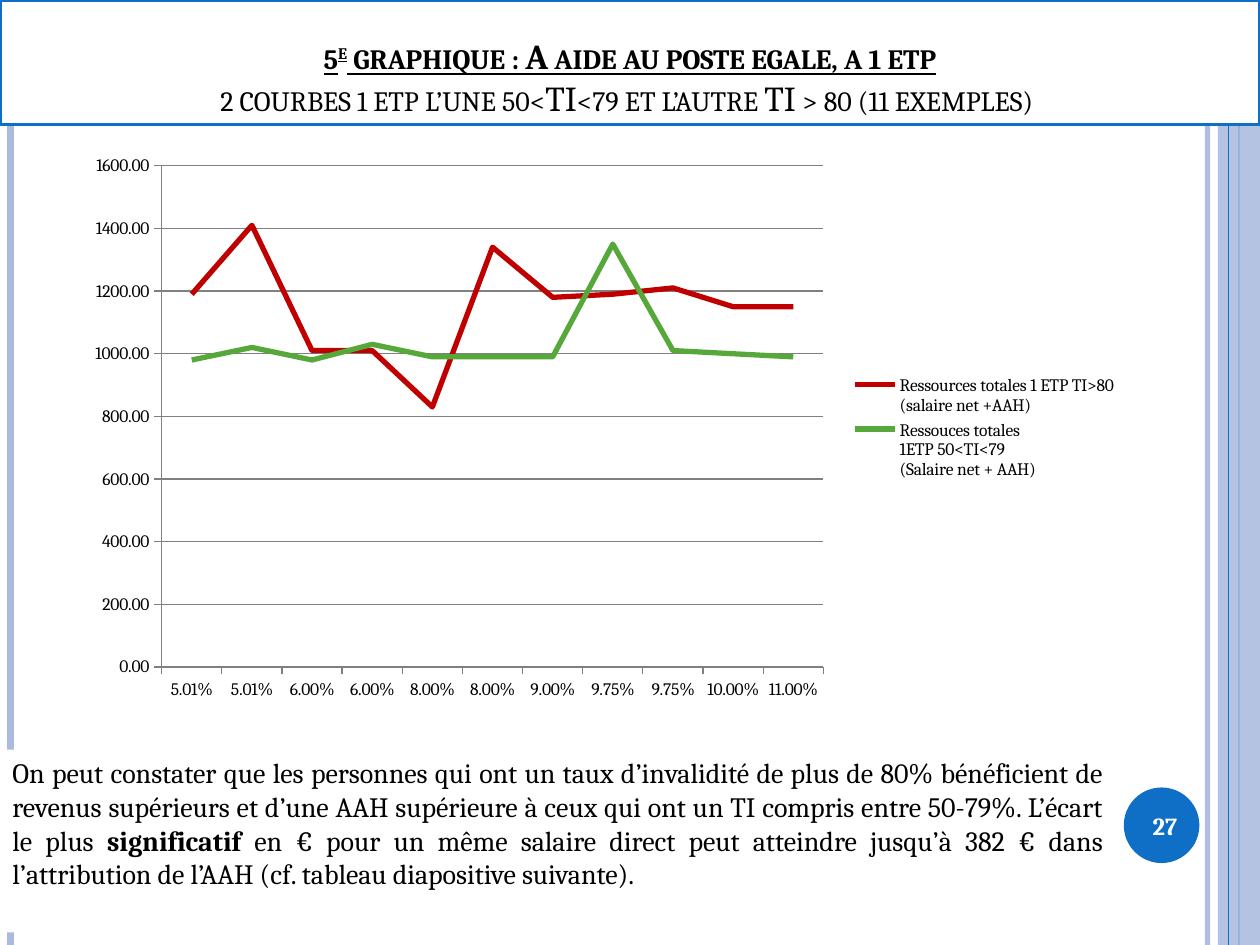
import pptx
import pptx.chart.data
import pptx.dml.color
import pptx.enum.chart
import pptx.enum.shapes
import pptx.enum.text
import pptx.oxml
import pptx.oxml.ns
import pptx.util
from dataclasses import dataclass

Pt = pptx.util.Pt
ALIGN = pptx.enum.text.PP_ALIGN
ANCHOR = pptx.enum.text.MSO_ANCHOR
SHAPE = pptx.enum.shapes.MSO_SHAPE


@dataclass(frozen=True)
class Theme:
    font: str = "Cambria"
    black: str = "000000"
    white: str = "FFFFFF"
    blue: str = "0F6FC6"
    pale: str = "ABBBDF"
    red: str = "C00000"
    green: str = "55A839"
    grid: str = "808080"
    title_size: int = 20
    body_size: int = 16
    badge_size: int = 14
    chart_size: int = 10


THEME = Theme()
WIDTH, HEIGHT = 720, 540

# Content: each paragraph is a list of (text, styles)
TITLE = [
    ("5", "bold underline small"),
    ("e", "bold underline small super"),
    (" graphique : A aide au poste egale, a 1 etp", "bold underline small"),
    ("\n", ""),
    ("2 courbes 1 etp l’une 50<TI<79 et l’autre TI > 80 (11 exemples) ", "small"),
]
BODY = [
    ("On peut constater que les personnes qui ont un taux d’invalidité de plus de 80% "
     "bénéficient de revenus supérieurs et d’une AAH supérieure à ceux qui ont un TI "
     "compris entre 50-79%. L’écart le plus ", ""),
    ("significatif", "bold"),
    (" en € pour un même salaire direct peut atteindre jusqu’à 382 € dans "
     "l’attribution de l’AAH (cf. tableau diapositive suivante).", ""),
]
PAGE_NUMBER = [(" 27", "bold")]
RATES = [0.0501, 0.0501, 0.06, 0.06, 0.08, 0.08, 0.09, 0.0975, 0.0975, 0.1, 0.11]
SERIES = [
    ("Ressources totales 1 ETP TI>80\n(salaire net +AAH)", THEME.red,
     [1190, 1410, 1010, 1010, 830, 1340, 1180, 1190, 1210, 1150, 1150]),
    ("Ressouces totales \n1ETP 50<TI<79\n(Salaire net + AAH)", THEME.green,
     [980, 1020, 980, 1030, 990, 990, 990, 1350, 1010, 1000, 990]),
]
# Vertical rules: x, colour, width, opacity in percent
RULES_BEHIND = [(690, THEME.pale, 3, 93), (6, THEME.pale, 4.5, 100),
                (708, THEME.blue, 1.5, 100)]
RULES_FRONT = [(702, THEME.blue, 0.75, 100)]


def rgb(color):
    return pptx.dml.color.RGBColor.from_string(color)


def set_opacity(element, percent):
    if percent < 100:
        color = element.find(".//" + pptx.oxml.ns.qn("a:srgbClr"))
        alpha = pptx.oxml.parse_xml(
            f'<a:alpha {pptx.oxml.ns.nsdecls("a")} val="{percent * 1000}"/>')
        color.append(alpha)


def add_rules(page, rules):
    for x, color, width, opacity in rules:
        rule = page.shapes.add_connector(
            pptx.enum.shapes.MSO_CONNECTOR.STRAIGHT, Pt(x), Pt(0), Pt(x), Pt(HEIGHT))
        rule.line.color.rgb = rgb(color)
        rule.line.width = Pt(width)
        properties = rule._element.spPr
        set_opacity(properties, opacity)
        properties.append(pptx.oxml.parse_xml(
            f'<a:effectLst {pptx.oxml.ns.nsdecls("a")}/>'))


def add_panel(page, kind, area, fill, line=None, opacity=100):
    panel = page.shapes.add_shape(kind, *map(Pt, area))
    panel.shadow.inherit = False
    panel.fill.solid()
    panel.fill.fore_color.rgb = rgb(fill)
    set_opacity(panel._element.spPr, opacity)
    if line:
        panel.line.color.rgb = rgb(line)
        panel.line.width = Pt(2)
    else:
        panel.line.fill.background()
    return panel


def write(box, spans, size, color, align, anchor):
    frame = box.text_frame
    frame.word_wrap = True
    frame.vertical_anchor = anchor
    para = frame.paragraphs[0]
    para.alignment = align
    for text, styles in spans:
        if text == "\n":
            para.add_line_break()
            continue
        span = para.add_run()
        span.text = text
        font = span.font
        font.name, font.size = THEME.font, Pt(size)
        font.color.rgb = rgb(color)
        font.bold = "bold" in styles
        font.underline = "underline" in styles
        properties = span._r.get_or_add_rPr()
        if "small" in styles:
            properties.set("cap", "small")
        if "super" in styles:
            properties.set("baseline", "30000")


def place(part, x, y, width, height, inner=False):
    """Give a chart part a fixed place, in fractions of the chart."""
    target = '<c:layoutTarget val="inner"/>' if inner else ""
    sizes = "".join(f'<c:{name} val="{value}"/>' for name, value in
                    zip("xywh", (x, y, width, height)))
    layout = pptx.oxml.parse_xml(
        f'<c:layout {pptx.oxml.ns.nsdecls("c")}><c:manualLayout>{target}'
        f'<c:xMode val="edge"/><c:yMode val="edge"/>{sizes}</c:manualLayout></c:layout>')
    for old in part.findall(pptx.oxml.ns.qn("c:layout")):
        part.remove(old)
    position = part.find(pptx.oxml.ns.qn("c:legendPos"))
    part.insert(0 if position is None else 1, layout)


def add_income_chart(page):
    data = pptx.chart.data.CategoryChartData(number_format="0.00")
    data.categories = RATES
    data.categories.number_format = "0.00%"
    for name, _, values in SERIES:
        data.add_series(name, values)
    chart = page.shapes.add_chart(
        pptx.enum.chart.XL_CHART_TYPE.LINE, Pt(42.5), Pt(82.8), Pt(601.2), Pt(323.3),
        data).chart
    chart.has_title = False
    chart.font.name, chart.font.size = THEME.font, Pt(THEME.chart_size)
    chart.font.color.rgb = rgb(THEME.black)

    for series, (_, color, _) in zip(chart.plots[0].series, SERIES):
        series.smooth = False
        series.format.line.color.rgb = rgb(color)
        series.format.line.width = Pt(3)
        series.marker.style = pptx.enum.chart.XL_MARKER_STYLE.NONE
    chart.plots[0].vary_by_categories = False

    rates, amounts = chart.category_axis, chart.value_axis
    amounts.minimum_scale, amounts.maximum_scale, amounts.major_unit = 0, 1600, 200
    amounts.has_major_gridlines = True
    for axis, number_format in ((rates, "0.00%"), (amounts, "0.00")):
        axis.major_tick_mark = pptx.enum.chart.XL_TICK_MARK.OUTSIDE
        axis.tick_labels.number_format = number_format
        axis.tick_labels.number_format_is_linked = False
    for item in (rates, amounts, amounts.major_gridlines):
        item.format.line.color.rgb = rgb(THEME.grid)
        item.format.line.width = Pt(0.75)

    chart.has_legend = True
    chart.legend.position = pptx.enum.chart.XL_LEGEND_POSITION.RIGHT
    chart.legend.include_in_layout = False
    place(chart._chartSpace.chart.plotArea, 0.083, 0.037, 0.629, 0.886, inner=True)
    place(chart.legend._element, 0.735, 0.4, 0.26, 0.2)


def main():
    deck = pptx.Presentation()
    deck.slide_width, deck.slide_height = Pt(WIDTH), Pt(HEIGHT)
    page = deck.slides.add_slide(deck.slide_layouts[6])

    # Side decoration
    add_rules(page, RULES_BEHIND)
    add_panel(page, SHAPE.RECTANGLE, (696, 0, 24, HEIGHT), THEME.pale, opacity=87)
    add_rules(page, RULES_FRONT)
    add_panel(page, SHAPE.OVAL, (642.2, 450, 43.2, 43.2), THEME.blue)

    # Title band
    title = add_panel(page, SHAPE.RECTANGLE, (0, 0, WIDTH, 71.3), THEME.white, THEME.blue)
    write(title, TITLE, THEME.title_size, THEME.black, ALIGN.CENTER, ANCHOR.BOTTOM)

    # Comment and page number
    comment = add_panel(page, SHAPE.RECTANGLE, (0, 428.4, 637.9, 104.4), THEME.white)
    write(comment, BODY, THEME.body_size, THEME.black, ALIGN.JUSTIFY, ANCHOR.TOP)
    number = page.shapes.add_textbox(Pt(640.1), Pt(451.4), Pt(48.2), Pt(41))
    write(number, PAGE_NUMBER, THEME.badge_size, THEME.white, ALIGN.CENTER, ANCHOR.MIDDLE)

    add_income_chart(page)
    deck.save("out.pptx")


if __name__ == "__main__":
    main()
